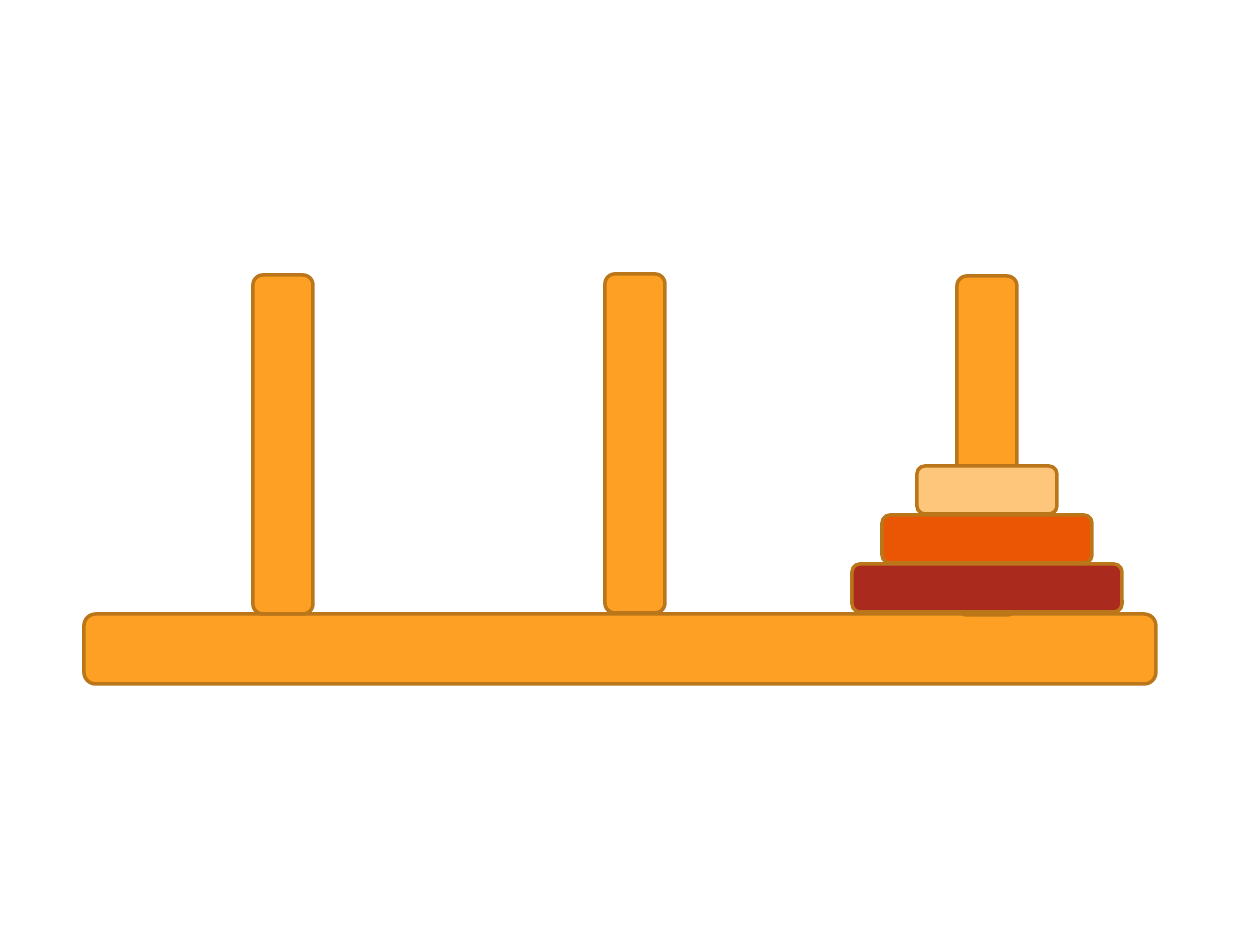
"""Tower of Hanoi board with three pegs and all discs on the right-hand peg."""
from pptx import Presentation
from pptx.dml.color import RGBColor
from pptx.enum.shapes import MSO_SHAPE
from pptx.util import Inches, Pt

PX = Inches(1) // 126
WOOD = RGBColor(0xFD, 0xA0, 0x23)
OUTLINE = RGBColor(0xBB, 0x76, 0x1A)
DARK_RED = RGBColor(0xAA, 0x2B, 0x1E)
ORANGE = RGBColor(0xEB, 0x56, 0x05)
PEACH = RGBColor(0xFE, 0xC6, 0x7B)

PEG_CENTERS = [283 + 352 * peg for peg in range(3)]
PEG_TOPS = [275, 274, 276]
PEG_WIDTH, PEG_HEIGHT = 60, 339
DISCS = [(270, DARK_RED), (210, ORANGE), (140, PEACH)]
DISC_HEIGHT, DISC_STEP = 48, 49
BOTTOM_DISC_TOP = 564


def add_block(slide, center, top, width, height, color):
    block = slide.shapes.add_shape(
        MSO_SHAPE.ROUNDED_RECTANGLE,
        (center - width // 2) * PX, top * PX, width * PX, height * PX)
    block.shadow.inherit = False
    block.fill.solid()
    block.fill.fore_color.rgb = color
    block.line.color.rgb = OUTLINE
    block.line.width = Pt(2)


def add_pegs(slide):
    for center, top in zip(PEG_CENTERS, PEG_TOPS):
        add_block(slide, center, top, PEG_WIDTH, PEG_HEIGHT, WOOD)


def add_discs(slide, center):
    for level, (width, color) in enumerate(DISCS):
        top = BOTTOM_DISC_TOP - level * DISC_STEP
        add_block(slide, center, top, width, DISC_HEIGHT, color)


def main():
    deck = Presentation()
    deck.slide_width, deck.slide_height = Inches(10), Inches(7.5)
    slide = deck.slides.add_slide(deck.slide_layouts[6])
    add_block(slide, 620, 614, 1072, 70, WOOD)
    add_pegs(slide)
    add_discs(slide, PEG_CENTERS[-1])
    deck.save("out.pptx")


if __name__ == "__main__":
    main()
